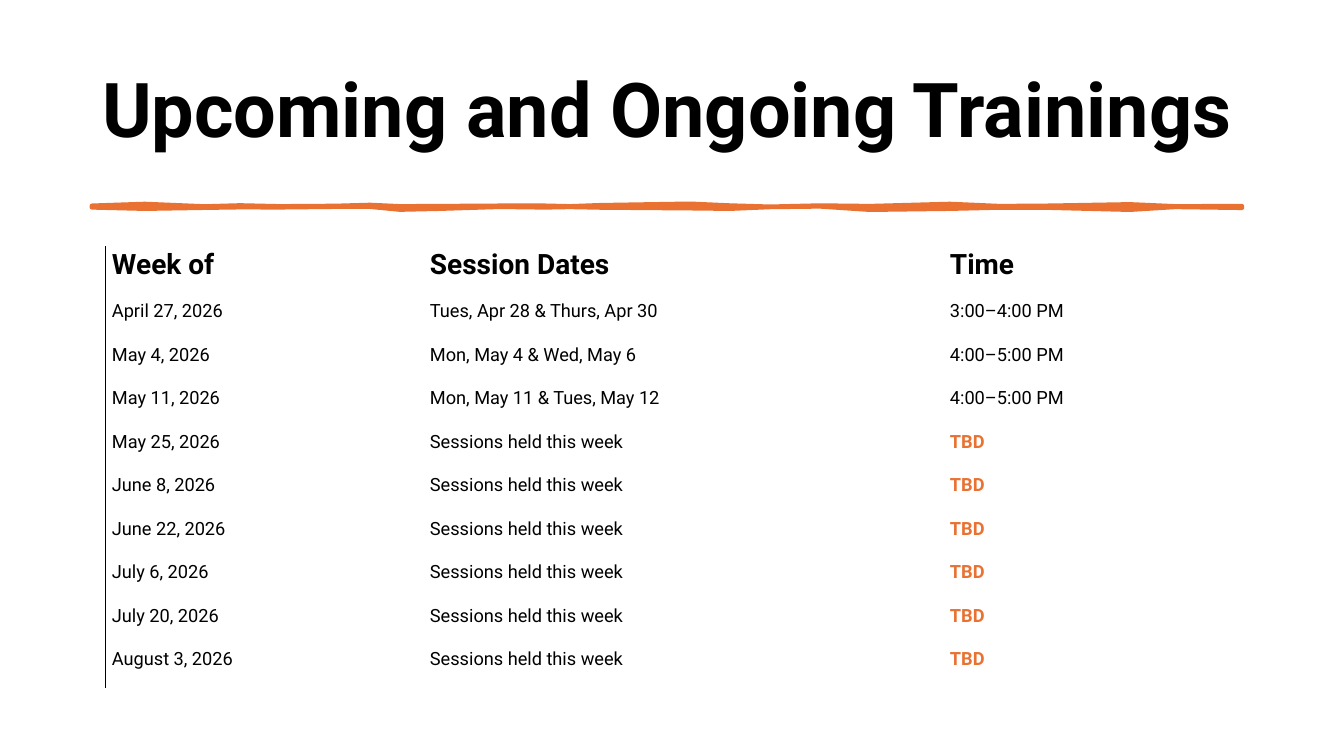
from lxml import etree
from pptx import Presentation
from pptx.dml.color import RGBColor
from pptx.enum.text import MSO_ANCHOR, MSO_AUTO_SIZE, PP_ALIGN
from pptx.oxml.ns import qn
from pptx.util import Emu, Pt

MIDDLE, LEFT, NO_FIT = MSO_ANCHOR.MIDDLE, PP_ALIGN.LEFT, MSO_AUTO_SIZE.NONE

EMU_PER_PX = 914400 / 100.8
FONT = "Roboto"
COLORS = {"ink": "000000", "accent": "E97132"}

HEADERS = ["Week of", "Session Dates", "Time"]
HELD, TBD = "Sessions held this week", "TBD"
SESSIONS = [
    ["April 27, 2026", "Tues, Apr 28 & Thurs, Apr 30", "3:00–4:00 PM"],
    ["May 4, 2026", "Mon, May 4 & Wed, May 6", "4:00–5:00 PM"],
    ["May 11, 2026", "Mon, May 11 & Tues, May 12", "4:00–5:00 PM"],
] + [[week, HELD, TBD] for week in (
    "May 25, 2026", "June 8, 2026", "June 22, 2026",
    "July 6, 2026", "July 20, 2026", "August 3, 2026")]
COLUMN_WIDTHS = [318, 520, 291]
ROW_HEIGHT = 43.5

# Brush stroke: x in px, then top and bottom edge in tenths of a px
BRUSH = [
    (92, 2058, 2074), (145, 2040, 2087), (205, 2065, 2077), (240, 2055, 2072),
    (280, 2064, 2073), (335, 2060, 2067), (370, 2050, 2067), (400, 2064, 2096),
    (440, 2062, 2087), (500, 2058, 2068), (545, 2058, 2074), (570, 2064, 2069),
    (600, 2053, 2075), (690, 2038, 2082), (730, 2056, 2087), (770, 2068, 2070),
    (820, 2056, 2064), (870, 2062, 2097), (950, 2040, 2087), (1000, 2062, 2075),
    (1050, 2058, 2077), (1130, 2044, 2097), (1175, 2064, 2069), (1242, 2062, 2078),
]


def px(length):
    return Emu(round(length * EMU_PER_PX))


def rgb(name):
    return RGBColor.from_string(COLORS[name])


def style_text(paragraph, size, color="ink", bold=False):
    for run in paragraph.runs:
        run.font.name = FONT
        run.font.size = Pt(size)
        run.font.bold = bold
        run.font.color.rgb = rgb(color)


def add_title(slide, text):
    title = slide.shapes.title
    title.left, title.top, title.width, title.height = map(px, (92, 40, 1159, 146))
    frame = title.text_frame
    frame.text = text
    frame.auto_size = NO_FIT
    frame.vertical_anchor = MIDDLE
    heading = frame.paragraphs[0]
    heading.alignment = LEFT
    heading.line_spacing = 0.9
    style_text(heading, 54, bold=True)


def add_brush_line(slide):
    top = [(10 * x, upper) for x, upper, _ in BRUSH]
    bottom = [(10 * x, lower) for x, _, lower in BRUSH]
    builder = slide.shapes.build_freeform(*top[0], scale=EMU_PER_PX / 10)
    builder.add_line_segments(top[1:] + bottom[::-1], close=True)
    brush = builder.convert_to_shape()
    brush.shadow.inherit = False
    brush.fill.solid()
    brush.fill.fore_color.rgb = rgb("accent")
    brush.line.color.rgb = rgb("accent")
    brush.line.width = Pt(3.25)
    etree.SubElement(brush.line._get_or_add_ln(), qn("a:round"))


def set_borders(cell, has_left):
    """Draw the left border if wanted and clear the other sides."""
    properties = cell._tc.get_or_add_tcPr()
    for position, side in enumerate(("a:lnL", "a:lnR", "a:lnT", "a:lnB")):
        border = etree.Element(qn(side), w=str(Pt(0.75)))
        if has_left and side == "a:lnL":
            fill = etree.SubElement(border, qn("a:solidFill"))
            etree.SubElement(fill, qn("a:srgbClr"), val=COLORS["ink"])
        else:
            etree.SubElement(border, qn("a:noFill"))
        properties.insert(position, border)


def fill_cell(cell, text, is_header):
    cell.fill.background()
    cell.vertical_anchor = MIDDLE
    cell.margin_left, cell.margin_top = px(7), px(2)
    cell.margin_right, cell.margin_bottom = px(11), px(16)
    cell.text = text
    pending = text == TBD
    style_text(cell.text_frame.paragraphs[0], 20 if is_header else 13,
               "accent" if pending else "ink", is_header or pending)


def add_schedule(slide):
    rows = [HEADERS] + SESSIONS
    schedule = slide.shapes.add_table(
        len(rows), len(HEADERS), px(105), px(246),
        px(sum(COLUMN_WIDTHS)), px(ROW_HEIGHT * len(rows))).table
    schedule.first_row = schedule.horz_banding = False
    for column, width in zip(schedule.columns, COLUMN_WIDTHS):
        column.width = px(width)
    for r, texts in enumerate(rows):
        schedule.rows[r].height = px(ROW_HEIGHT)
        for c, text in enumerate(texts):
            cell = schedule.cell(r, c)
            fill_cell(cell, text, is_header=r == 0)
            set_borders(cell, has_left=c == 0)


def main():
    deck = Presentation()
    deck.slide_width, deck.slide_height = px(1344), px(756)
    slide = deck.slides.add_slide(deck.slide_layouts[5])
    add_title(slide, "Upcoming and Ongoing Trainings")
    add_brush_line(slide)
    add_schedule(slide)
    deck.save("out.pptx")


if __name__ == "__main__":
    main()
